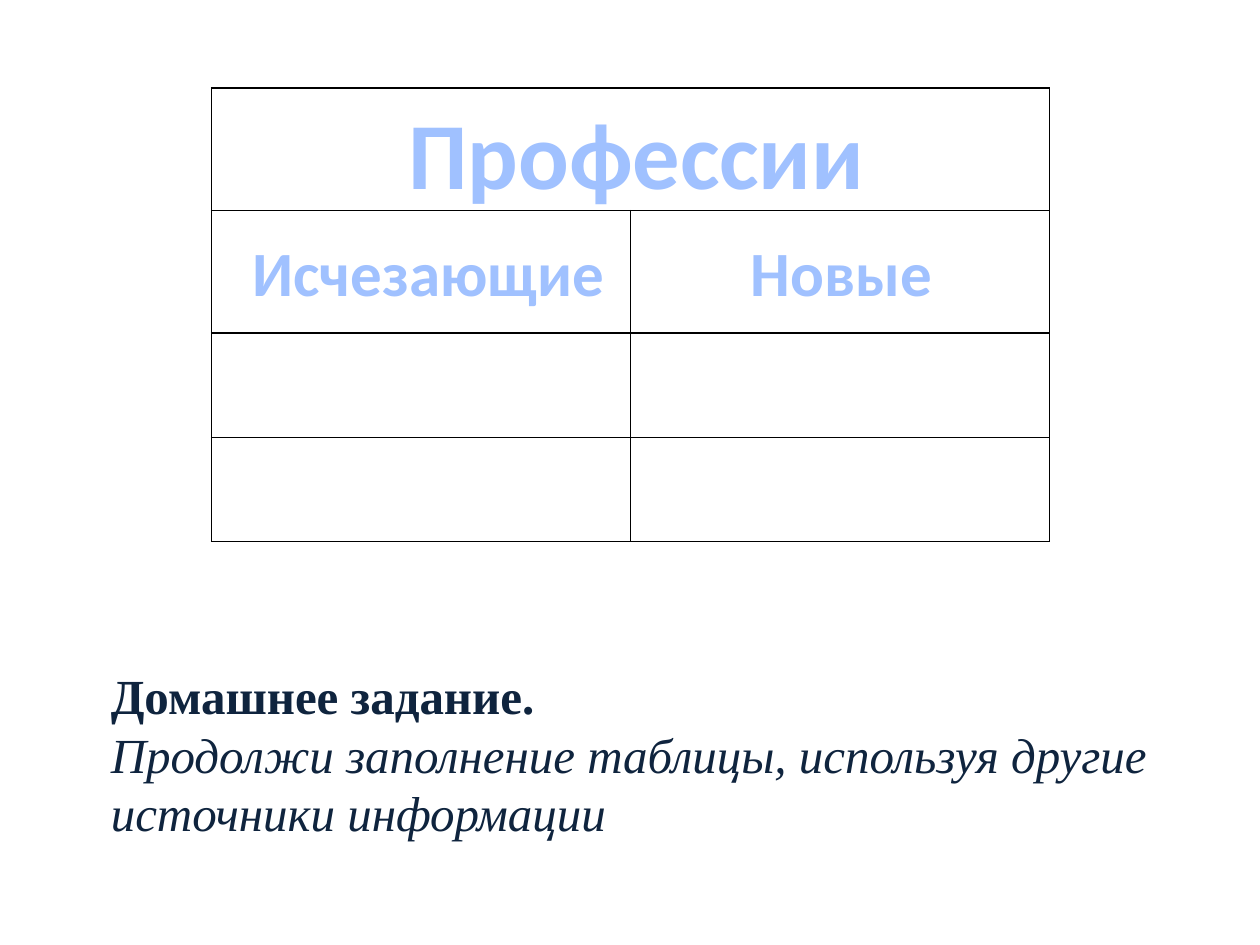
from dataclasses import dataclass
from typing import Any

import pptx
import pptx.dml.color
import pptx.enum.text
import pptx.oxml
import pptx.oxml.ns
import pptx.util


@dataclass(frozen=True)
class Theme:
    heading: str = "A0C1FF"
    body: str = "0F243E"
    border: str = "000000"
    heading_font: str = "Calibri"
    body_font: str = "Times New Roman"
    title_size: int = 54
    column_size: int = 36
    body_size: int = 28
    border_width: int = 1


@dataclass(frozen=True)
class Area:
    left: float
    top: float
    width: float
    height: float


@dataclass(frozen=True)
class ColumnHeading:
    wording: str
    area: Area


THEME = Theme()
WIDTH, HEIGHT = pptx.util.Inches(10), pptx.util.Inches(7.5)
TABLE_AREA = Area(0.168, 0.7 / 7.5, 0.665, 3.6 / 7.5)
ROW_SHARES = (0.27, 0.27, 0.23, 0.23)
COLUMNS = 2
TITLE_AREA = Area(0.312, 0.7 / 7.5, 0.386, 1.01 / 7.5)
HOMEWORK_AREA = Area(0.078, 5.23 / 7.5, 0.891, 1.51 / 7.5)
COLUMN_HEADINGS = [
    ColumnHeading(wording, Area(left, 0.24, 0.336, 0.71 / 7.5))
    for wording, left in (("Исчезающие", 0.172), ("Новые", 0.5))
]
HEADING_FORMAT = {"name": THEME.heading_font, "bold": True}
HOMEWORK_FORMAT = {"name": THEME.body_font, "size": pptx.util.Pt(THEME.body_size)}
HOMEWORK = (
    ("Домашнее задание.", {"bold": True}),
    ("Продолжи заполнение таблицы, используя другие источники информации",
     {"bold": False, "italic": True}),
)


def apply(target: Any, values: dict[str, Any]) -> None:
    for attribute, value in values.items():
        setattr(target, attribute, value)


def frame(area: Area) -> dict[str, int]:
    return {
        "left": round(area.left * WIDTH),
        "top": round(area.top * HEIGHT),
        "width": round(area.width * WIDTH),
        "height": round(area.height * HEIGHT),
    }


def write(paragraph: Any, wording: str, color: str, values: dict[str, Any]) -> None:
    run = paragraph.add_run()
    run.text = wording
    apply(run.font, values)
    run.font.color.rgb = pptx.dml.color.RGBColor.from_string(color)


def place(holder: Any, area: Area, wrap: bool = True) -> Any:
    apply(holder, frame(area))
    apply(holder.text_frame, {
        "word_wrap": wrap,
        "auto_size": pptx.enum.text.MSO_AUTO_SIZE.SHAPE_TO_FIT_TEXT,
        "vertical_anchor": pptx.enum.text.MSO_ANCHOR.TOP,
    })
    return holder.text_frame


def write_heading(holder: Any, area: Area, wording: str, size: int, wrap: bool) -> None:
    paragraph = place(holder, area, wrap).paragraphs[0]
    paragraph.alignment = pptx.enum.text.PP_ALIGN.CENTER
    write(paragraph, wording, THEME.heading,
          {**HEADING_FORMAT, "size": pptx.util.Pt(size)})


def outline_cell(cell: Any) -> None:
    properties = cell._tc.get_or_add_tcPr()
    for side in ("lnL", "lnR", "lnT", "lnB"):
        properties.append(pptx.oxml.parse_xml(
            f'<a:{side} {pptx.oxml.ns.nsdecls("a")} w="{pptx.util.Pt(THEME.border_width)}">'
            f'<a:solidFill><a:srgbClr val="{THEME.border}"/></a:solidFill></a:{side}>'
        ))
    cell.fill.background()


def add_professions_table(slide: Any) -> None:
    bounds = frame(TABLE_AREA)
    graphic = slide.shapes.add_table(len(ROW_SHARES), COLUMNS, **bounds)
    table = graphic.table
    apply(table, {"first_row": False, "horz_banding": False})
    for row, share in zip(table.rows, ROW_SHARES):
        row.height = round(bounds["height"] * share)
    for cell in table.iter_cells():
        outline_cell(cell)
    table.cell(0, 0).merge(table.cell(0, COLUMNS - 1))
    slide.shapes.title._element.addprevious(graphic._element)


def add_homework(holder: Any) -> None:
    text = place(holder, HOMEWORK_AREA)
    for index, (wording, values) in enumerate(HOMEWORK):
        paragraph = text.add_paragraph() if index else text.paragraphs[0]
        paragraph.space_before = pptx.util.Pt(0)
        properties = paragraph._p.get_or_add_pPr()
        apply(properties.attrib, {})
        properties.set("marL", "0")
        properties.set("indent", "0")
        properties.append(pptx.oxml.parse_xml(
            f'<a:buNone {pptx.oxml.ns.nsdecls("a")}/>'))
        write(paragraph, wording, THEME.body, {**HOMEWORK_FORMAT, **values})


def main() -> None:
    deck = pptx.Presentation()
    apply(deck, {"slide_width": WIDTH, "slide_height": HEIGHT})
    slide = deck.slides.add_slide(deck.slide_layouts[1])
    add_professions_table(slide)
    write_heading(slide.shapes.title, TITLE_AREA, "Профессии", THEME.title_size, False)
    for heading in COLUMN_HEADINGS:
        holder = slide.shapes.add_textbox(**frame(heading.area))
        write_heading(holder, heading.area, heading.wording, THEME.column_size, True)
    add_homework(slide.placeholders[1])
    deck.save("out.pptx")


if __name__ == "__main__":
    main()
